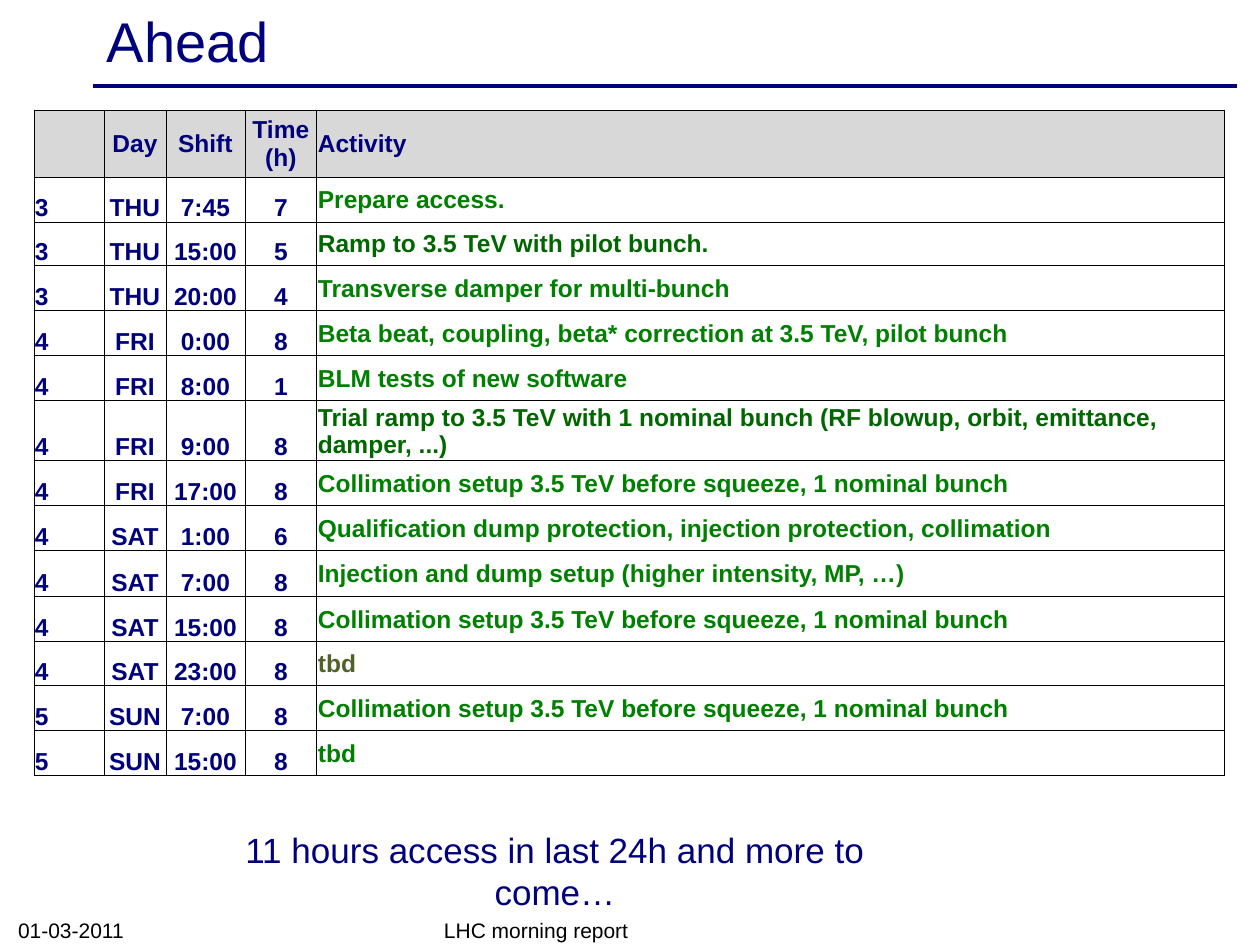
from lxml import etree
from pptx import Presentation
from pptx.dml.color import RGBColor
from pptx.enum.shapes import MSO_CONNECTOR
from pptx.enum.text import MSO_ANCHOR as ANCHOR, PP_ALIGN as ALIGN
from pptx.oxml.ns import qn
from pptx.util import Emu, Pt

EMU_PER_PX = 914400 // 126
COLORS = {
    "navy": "00007D", "black": "000000", "header": "D8D8D8",
    "green": "008000", "dark green": "006600", "olive": "4F6228",
}
COLUMN_WIDTHS = [70, 62, 79, 72, 908]
ROW_HEIGHT = 45
SPECIAL_ROW_HEIGHTS = {0: 67, 2: 44, 6: 55, 9: 46, 11: 44}
HEADER = ["", "Day", "Shift", "Time (h)", "Activity"]
COLLIMATION = "Collimation setup 3.5 TeV before squeeze, 1 nominal bunch"
SCHEDULE = [
    ("3", "THU", "7:45", "7", "Prepare access."),
    ("3", "THU", "15:00", "5", "Ramp to 3.5 TeV with pilot bunch."),
    ("3", "THU", "20:00", "4", "Transverse damper for multi-bunch"),
    ("4", "FRI", "0:00", "8", "Beta beat, coupling, beta* correction at 3.5 TeV, pilot bunch"),
    ("4", "FRI", "8:00", "1", "BLM tests of new software"),
    ("4", "FRI", "9:00", "8",
     "Trial ramp to 3.5 TeV with 1 nominal bunch (RF blowup, orbit, emittance, damper, ...)"),
    ("4", "FRI", "17:00", "8", COLLIMATION),
    ("4", "SAT", "1:00", "6", "Qualification dump protection, injection protection, collimation"),
    ("4", "SAT", "7:00", "8", "Injection and dump setup (higher intensity, MP, …)"),
    ("4", "SAT", "15:00", "8", COLLIMATION),
    ("4", "SAT", "23:00", "8", "tbd"),
    ("5", "SUN", "7:00", "8", COLLIMATION),
    ("5", "SUN", "15:00", "8", "tbd"),
]
ACTIVITY_COLORS = {2: "dark green", 6: "dark green", 11: "olive"}


def px(length):
    return Emu(length * EMU_PER_PX)


def rgb(name):
    return RGBColor.from_string(COLORS[name])


def set_attributes(target, values):
    for name, value in values.items():
        setattr(target, name, value)


def write_text(text_frame, text, size, color, align=ALIGN.LEFT, bold=False):
    paragraph = text_frame.paragraphs[0]
    paragraph.alignment = align
    run = paragraph.add_run()
    run.text = text
    set_attributes(run.font, {"name": "Arial", "size": Pt(size), "bold": bold})
    run.font.color.rgb = rgb(color)


def add_text(slide, box, text, size, color, anchor, align=ALIGN.LEFT, margin=13):
    text_box = slide.shapes.add_textbox(*map(px, box))
    set_attributes(text_box.text_frame, {
        "word_wrap": True, "vertical_anchor": anchor,
        "margin_left": px(margin), "margin_right": px(margin),
    })
    write_text(text_box.text_frame, text, size, color, align)


def add_rule(slide, left, right, y):
    rule = slide.shapes.add_connector(MSO_CONNECTOR.STRAIGHT, px(left), px(y), px(right), px(y))
    rule.line.color.rgb = rgb("navy")
    rule.line.width = Pt(2)
    etree.SubElement(rule._element.spPr, qn("a:effectLst"))


def add_borders(cell):
    """Draw thin black lines on all four sides; they must precede the fill."""
    properties = cell._tc.get_or_add_tcPr()
    for index, side in enumerate(("lnL", "lnR", "lnT", "lnB")):
        line = etree.Element(qn(f"a:{side}"), w=str(Pt(0.5)))
        fill = etree.SubElement(line, qn("a:solidFill"))
        etree.SubElement(fill, qn("a:srgbClr"), val=COLORS["black"])
        properties.insert(index, line)


def format_cell(cell, row, column):
    is_header = row == 0
    is_activity = column == len(HEADER) - 1
    set_attributes(cell, {
        "margin_left": px(1), "margin_right": px(1), "margin_top": px(1), "margin_bottom": 0,
        "vertical_anchor": ANCHOR.MIDDLE if is_header or is_activity else ANCHOR.BOTTOM,
    })
    if is_header:
        cell.fill.solid()
        cell.fill.fore_color.rgb = rgb("header")
    else:
        cell.fill.background()
    add_borders(cell)


def add_schedule(slide, left, top):
    rows = [HEADER, *SCHEDULE]
    heights = [SPECIAL_ROW_HEIGHTS.get(row, ROW_HEIGHT) for row in range(len(rows))]
    frame = slide.shapes.add_table(len(rows), len(HEADER), px(left), px(top),
                                   px(sum(COLUMN_WIDTHS)), px(sum(heights)))
    table = frame.table
    set_attributes(table, {"first_row": False, "horz_banding": False})
    for column, width in zip(table.columns, COLUMN_WIDTHS):
        column.width = px(width)
    for row, (texts, height) in enumerate(zip(rows, heights)):
        table.rows[row].height = px(height)
        for column, text in enumerate(texts):
            cell = table.cell(row, column)
            format_cell(cell, row, column)
            color = "navy"
            if row > 0 and column == len(HEADER) - 1:
                color = ACTIVITY_COLORS.get(row, "green")
            align = ALIGN.CENTER if column in (1, 2, 3) else ALIGN.LEFT
            if text:
                write_text(cell.text_frame, text, 14, color, align, bold=True)


def main():
    presentation = Presentation()
    presentation.slide_width, presentation.slide_height = px(1260), px(945)
    slide = presentation.slides.add_slide(presentation.slide_layouts[6])
    add_rule(slide, 93, 1237, 86)
    add_text(slide, (94, 4, 1134, 72), "Ahead", 32, "navy", ANCHOR.MIDDLE)
    add_text(slide, (5, 912, 294, 37), "01-03-2011", 12, "black", ANCHOR.BOTTOM)
    add_text(slide, (431, 913, 399, 36), "LHC morning report", 12, "black", ANCHOR.BOTTOM)
    add_schedule(slide, 34, 110)
    add_text(slide, (233, 822, 644, 92), "11 hours access in last 24h and more to come…",
             20, "navy", ANCHOR.TOP, ALIGN.CENTER, margin=0)
    presentation.save("out.pptx")


if __name__ == "__main__":
    main()
